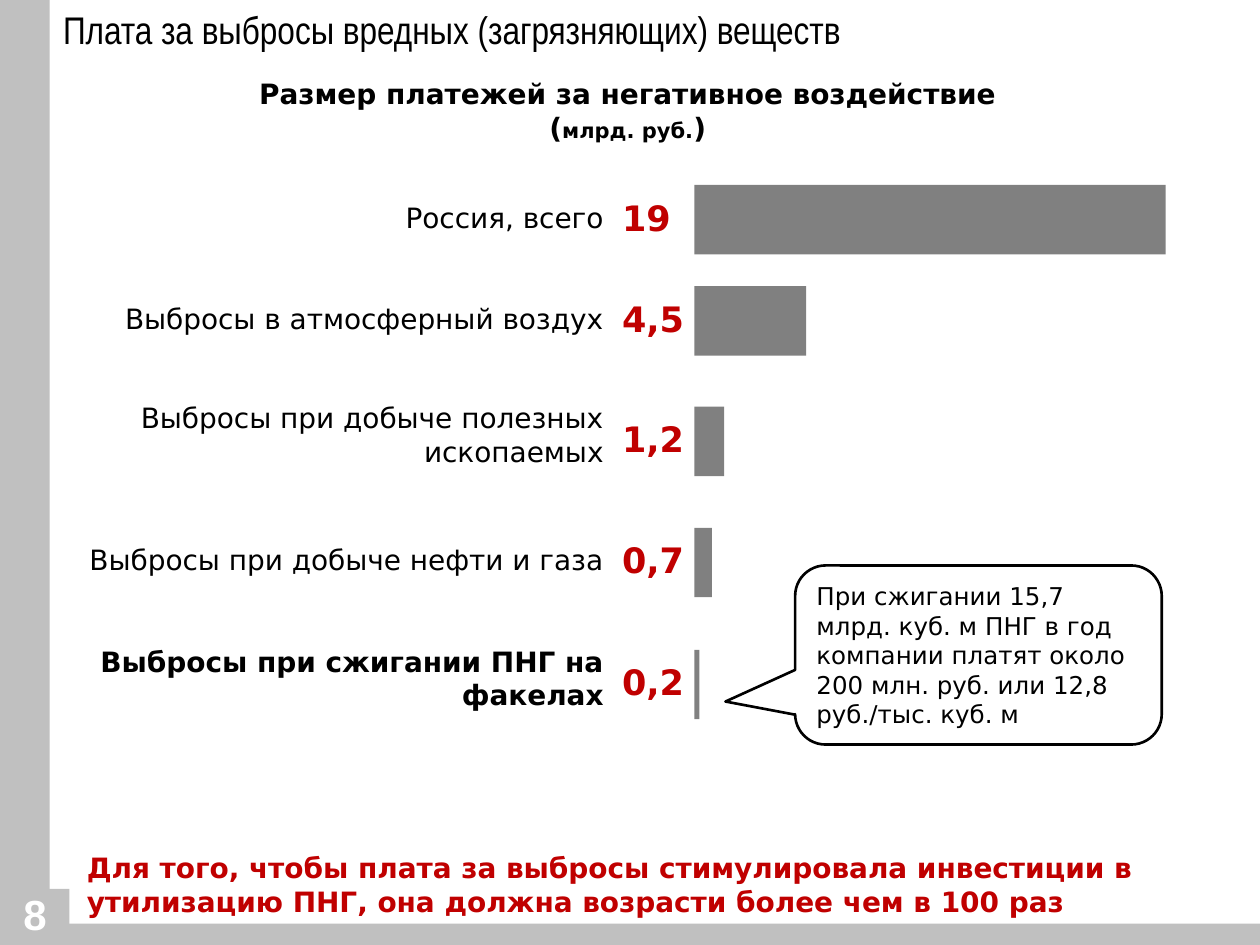
from dataclasses import dataclass

from pptx import Presentation
from pptx import util as u
from pptx.dml.color import RGBColor
from pptx.enum import shapes, text


@dataclass(frozen=True)
class Theme:
    black: str = "000000"
    white: str = "FFFFFF"
    frame: str = "C0C0C0"
    bar: str = "808080"
    accent: str = "C00000"
    body_font: str = "DejaVu Sans"
    title_font: str = "Arial Narrow"
    number_font: str = "Arial"
    title: int = 22
    number: int = 24
    value: int = 20
    body: int = 16
    note: int = 14
    unit: int = 12


@dataclass(frozen=True)
class Box:
    """A region in centimetres."""
    left: float
    top: float
    width: float
    height: float

    def inner(self, left, top, width, height):
        return Box(self.left + left, self.top + top, width, height)

    def lengths(self):
        return [u.Cm(n) for n in (self.left, self.top, self.width, self.height)]


THEME = Theme()
LEFT, CENTER, RIGHT = text.PP_ALIGN.LEFT, text.PP_ALIGN.CENTER, text.PP_ALIGN.RIGHT

# Label, value, lines in the label, top of the bar within the chart
PAYMENTS = [
    ("Россия, всего", 19, 1, 0),
    ("Выбросы в атмосферный воздух", 4.5, 1, 2.04),
    ("Выбросы при добыче полезных ископаемых", 1.2, 2, 4.47),
    ("Выбросы при добыче нефти и газа", 0.7, 1, 6.91),
    ("Выбросы при сжигании ПНГ на факелах", 0.2, 2, 9.37),
]


def style(span, size, color=THEME.black, bold=False, font=THEME.body_font):
    span.font.size = u.Pt(size)
    span.font.name = font
    span.font.bold = bold
    span.font.color.rgb = RGBColor.from_string(color)


def add_text(page, box, words, size, align=LEFT, **look):
    area = page.shapes.add_textbox(*box.lengths())
    area.text_frame.word_wrap = True
    area.text_frame.text = words
    para = area.text_frame.paragraphs[0]
    para.alignment = align
    style(para.runs[0], size, **look)
    return para


def add_block(page, box, color, kind=shapes.MSO_SHAPE.RECTANGLE):
    block = page.shapes.add_shape(kind, *box.lengths())
    block.shadow.inherit = False
    block.fill.solid()
    block.fill.fore_color.rgb = RGBColor.from_string(color)
    block.line.fill.background()
    return block


def add_frame(page, box):
    # Side band, number tab and bottom band
    add_block(page, box.inner(0, 0, 1, 18.02), THEME.frame)
    add_block(page, box.inner(0, 17.92, 1.4, 0.82), THEME.frame)
    add_block(page, box.inner(0, 18.62, box.width, 0.43), THEME.frame)
    add_text(page, box.inner(-0.64, 17.78, 2.69, 1.45), "8", THEME.number, CENTER,
             color=THEME.white, bold=True, font=THEME.number_font)


def add_title(page, box):
    title = page.shapes.title
    title.left, title.top, title.width, title.height = box.lengths()
    frame = title.text_frame
    frame.text = "Плата за выбросы вредных (загрязняющих) веществ"
    frame.margin_left = frame.margin_right = frame.margin_top = frame.margin_bottom = 0
    frame.vertical_anchor = text.MSO_ANCHOR.MIDDLE
    frame.auto_size = text.MSO_AUTO_SIZE.NONE
    para = frame.paragraphs[0]
    para.alignment = LEFT
    para.line_spacing = 0.9
    style(para.runs[0], THEME.title, font=THEME.title_font)


def add_heading(page, box):
    para = add_text(page, box, "Размер платежей за негативное воздействие (",
                    THEME.body, CENTER, bold=True)
    for words, size in (("млрд. руб.", THEME.unit), (")", THEME.body)):
        span = para.add_run()
        span.text = words
        style(span, size, bold=True)


def add_payments(page, box):
    value_left, bar_left, bar_height, unit_width = 12.06, 13.77, 1.4, 0.5
    for label, value, lines, top in PAYMENTS:
        last = label == PAYMENTS[-1][0]
        add_block(page, box.inner(bar_left, top, value * unit_width, bar_height), THEME.bar)
        add_text(page, box.inner(value_left, top + 0.1, 1.9, 1.96),
                 str(value).replace(".", ","), THEME.value,
                 color=THEME.accent, bold=True)
        # A second line lifts the label
        shift, height = (0.18, 0.94) if lines == 1 else (-0.24, 1.63)
        add_text(page, box.inner(0, top + shift, 12.19, height), label,
                 THEME.body, RIGHT, bold=last)


def add_callout(page, box):
    callout = add_block(page, box, THEME.white,
                        shapes.MSO_SHAPE.ROUNDED_RECTANGULAR_CALLOUT)
    for index, amount in enumerate((-0.69, 0.26, 0.17)):
        callout.adjustments[index] = amount
    callout.line.color.rgb = RGBColor.from_string(THEME.black)
    callout.line.width = u.Pt(1.5)
    frame = callout.text_frame
    frame.word_wrap = True
    frame.vertical_anchor = text.MSO_ANCHOR.MIDDLE
    frame.text = ("При сжигании 15,7 млрд. куб. м ПНГ в год компании платят "
                  "около 200 млн. руб. или 12,8 руб./тыс. куб. м")
    para = frame.paragraphs[0]
    para.alignment = LEFT
    style(para.runs[0], THEME.note)


def add_conclusion(page, box):
    add_text(page, box,
             "Для того, чтобы плата за выбросы стимулировала инвестиции в "
             "утилизацию ПНГ, она должна возрасти более чем в 100 раз",
             THEME.body, color=THEME.accent, bold=True)


def main():
    deck = Presentation()
    deck.slide_width, deck.slide_height = u.Cm(25.4), u.Cm(19.05)
    page = deck.slides.add_slide(deck.slide_layouts[5])
    add_frame(page, Box(0, 0, 25.4, 19.05))
    add_title(page, Box(1.27, 0.23, 22.86, 0.84))
    add_heading(page, Box(4.11, 1.42, 17.09, 1.63))
    add_payments(page, Box(0.23, 3.73, 23.27, 10.77))
    add_callout(page, Box(16.03, 11.4, 7.39, 3.61))
    add_conclusion(page, Box(1.5, 17.02, 23.39, 1.63))
    deck.save("out.pptx")


if __name__ == "__main__":
    main()
